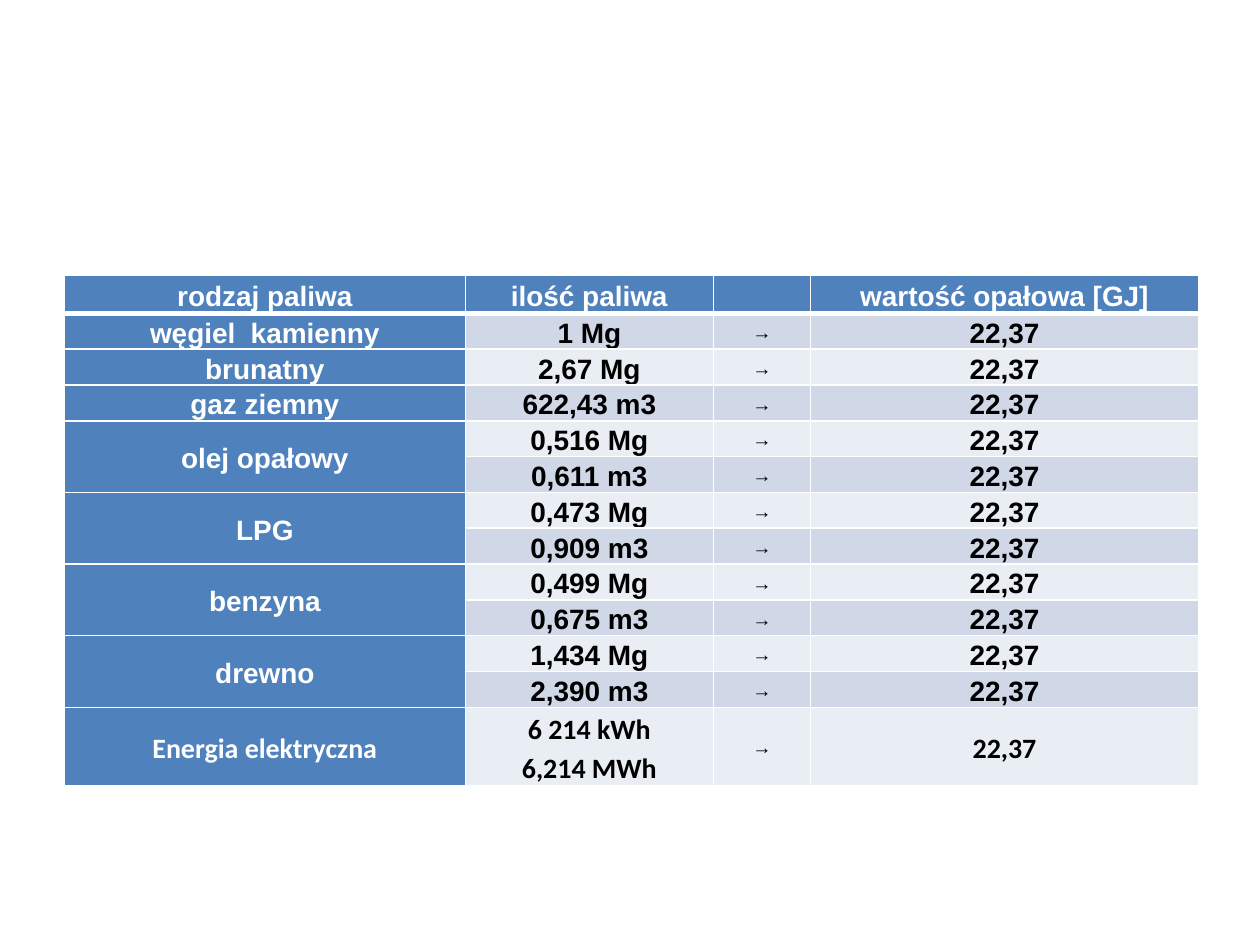
from dataclasses import dataclass

from lxml.etree import SubElement
from pptx import Presentation
from pptx.dml.color import RGBColor
from pptx.enum.text import MSO_ANCHOR, PP_ALIGN
from pptx.oxml.ns import qn
from pptx.util import Cm, Pt

WHITE, BLACK, BLUE = "FFFFFF", "000000", "4F81BD"
BANDS = ("D0D8E8", "E9EDF4")
HEADINGS = ("rodzaj paliwa", "ilość paliwa", "", "wartość opałowa [GJ]")
COLUMN_WIDTHS = (8.08, 5.0, 1.96, 7.82)
ROW_HEIGHT = 0.53
HEATING_VALUE = "22,37"
CELL_FORMAT = {
    "margin_left": Cm(0.12),
    "margin_right": Cm(0.12),
    "margin_top": 0,
    "margin_bottom": 0,
    "vertical_anchor": MSO_ANCHOR.MIDDLE,
}


@dataclass(frozen=True)
class Fuel:
    """A fuel and its equivalent amounts; each amount fills one table row."""
    name: str
    amounts: tuple[str, ...]
    font: str = "Arial"


FUELS = (
    Fuel("węgiel  kamienny", ("1 Mg",)),
    Fuel("brunatny", ("2,67 Mg",)),
    Fuel("gaz ziemny", ("622,43 m3",)),
    Fuel("olej opałowy", ("0,516 Mg", "0,611 m3")),
    Fuel("LPG", ("0,473 Mg", "0,909 m3")),
    Fuel("benzyna", ("0,499 Mg", "0,675 m3")),
    Fuel("drewno", ("1,434 Mg", "2,390 m3")),
    Fuel("Energia elektryczna", ("6 214 kWh\n6,214 MWh",), "Calibri"),
)


def paint(color_format, color: str) -> None:
    color_format.rgb = RGBColor.from_string(color)


def add_borders(cell, top: float, bottom: float) -> None:
    properties = cell._tc.get_or_add_tcPr()
    for side, width in {"L": 1, "R": 1, "T": top, "B": bottom}.items():
        border = SubElement(properties, qn(f"a:ln{side}"), w=str(Pt(width)))
        fill = SubElement(border, qn("a:solidFill"))
        SubElement(fill, qn("a:srgbClr"), val=WHITE)


def format_cell(cell, row: int, color: str) -> None:
    for name, value in CELL_FORMAT.items():
        setattr(cell, name, value)
    add_borders(cell, top=3 if row == 1 else 1, bottom=3 if row == 0 else 1)
    cell.fill.solid()
    paint(cell.fill.fore_color, color)


def write(cell, text: str, color: str, font: str = "Arial", size: int = 16) -> None:
    cell.text = text
    for paragraph in cell.text_frame.paragraphs:
        paragraph.alignment = PP_ALIGN.CENTER
        paragraph.line_spacing = 1.15
        for run in paragraph.runs:
            for name, value in {"name": font, "size": Pt(size), "bold": True}.items():
                setattr(run.font, name, value)
            paint(run.font.color, color)


def fill_table(table) -> None:
    for column, width in zip(table.columns, COLUMN_WIDTHS):
        column.width = Cm(width)
    for row, table_row in enumerate(table.rows):
        table_row.height = Cm(ROW_HEIGHT)
        for column, cell in enumerate(table_row.cells):
            is_heading = row == 0 or column == 0
            format_cell(cell, row, BLUE if is_heading else BANDS[(row - 1) % 2])

    for column, heading in enumerate(HEADINGS):
        if heading:
            write(table.cell(0, column), heading, WHITE)

    row = 1
    for fuel in FUELS:
        name_cell = table.cell(row, 0)
        if len(fuel.amounts) > 1:
            name_cell.merge(table.cell(row + len(fuel.amounts) - 1, 0))
        write(name_cell, fuel.name, WHITE, fuel.font)
        for amount in fuel.amounts:
            write(table.cell(row, 1), amount, BLACK, fuel.font)
            write(table.cell(row, 2), "→", BLACK, size=11)
            write(table.cell(row, 3), HEATING_VALUE, BLACK, fuel.font)
            row += 1


def main() -> None:
    presentation = Presentation()
    presentation.slide_width, presentation.slide_height = Cm(25.4), Cm(19.05)
    slide = presentation.slides.add_slide(presentation.slide_layouts[6])
    row_count = 1 + sum(len(fuel.amounts) for fuel in FUELS)
    table_height = Cm(10.9)
    frame = slide.shapes.add_table(
        row_count, len(HEADINGS), Cm(1.3), Cm(5.54), Cm(sum(COLUMN_WIDTHS)), table_height
    )
    fill_table(frame.table)
    frame.height = table_height
    presentation.save("out.pptx")


if __name__ == "__main__":
    main()
